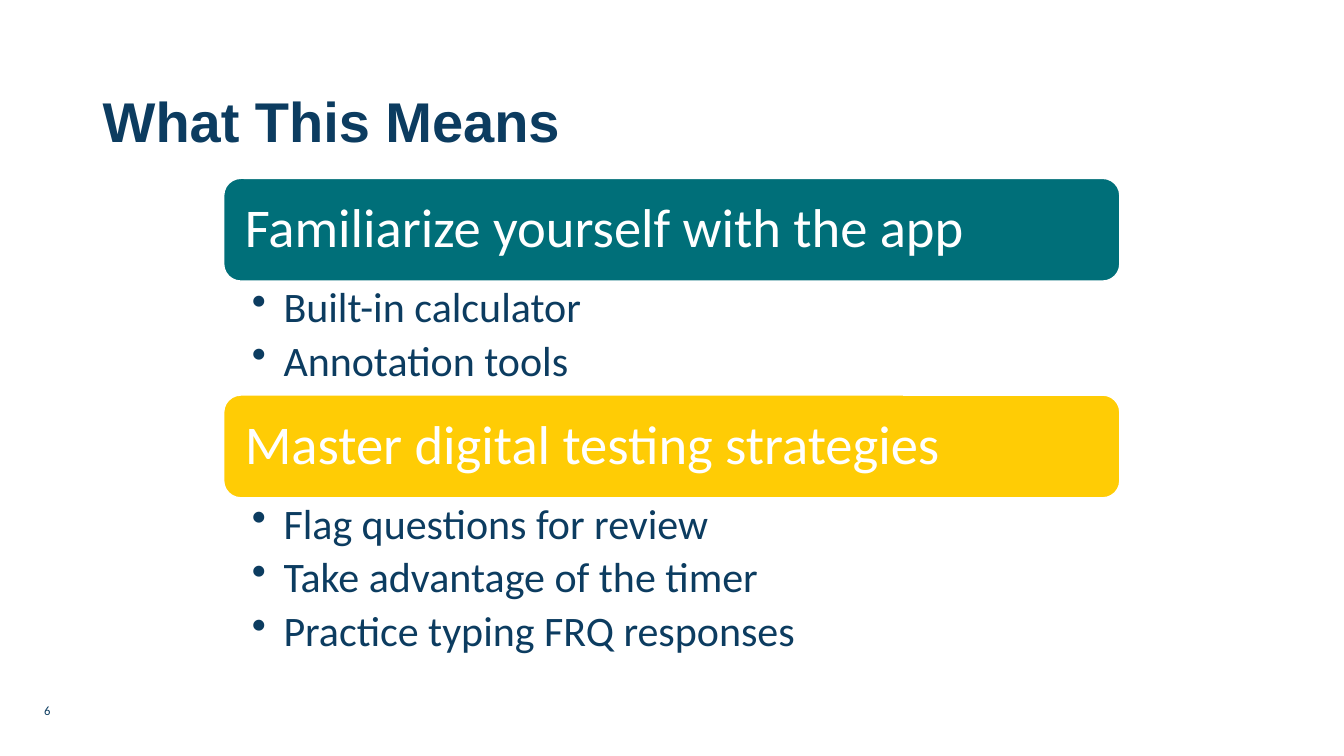
import pptx
import pptx.util
import pptx.dml.color
import pptx.enum.shapes
import pptx.enum.text
import lxml.etree

Pt = pptx.util.Pt
ANCHOR = pptx.enum.text.MSO_ANCHOR

TITLE = "What This Means"
PAGE = "6"
SECTIONS = [
    ("Familiarize yourself with the app", "006F79", 81.4,
     ["Built-in calculator", "Annotation tools"]),
    ("Master digital testing strategies", "FFCC05", 123.8,
     ["Flag questions for review", "Take advantage of the timer",
      "Practice typing FRQ responses"]),
]
NAVY, WHITE = "0C3C60", "FFFFFF"
LEFT, TOP, WIDTH, BAR_H = 159.8, 127.4, 640.1, 73.4
INDENT = 22.5

TITLE_FONT = {"size": Pt(40), "name": "Arial", "bold": True}
BAR_FONT = {"size": Pt(39), "name": "Calibri"}
BULLET_FONT = {"size": Pt(30), "name": "Calibri"}
PAGE_FONT = {"size": Pt(9), "name": "Calibri"}


def rgb(value):
    return pptx.dml.color.RGBColor.from_string(value)


def set_frame(tf, insets, anchor=ANCHOR.TOP):
    tf.word_wrap = True
    tf.auto_size = pptx.enum.text.MSO_AUTO_SIZE.NONE
    tf.vertical_anchor = anchor
    for side, inset in zip(("left", "top", "right", "bottom"), insets):
        setattr(tf, "margin_" + side, Pt(inset))


def write(p, text, font, color, spacing=0.9):
    p.alignment = pptx.enum.text.PP_ALIGN.LEFT
    p.line_spacing = spacing
    r = p.add_run()
    r.text = text
    for name, value in font.items():
        setattr(r.font, name, value)
    r.font.color.rgb = rgb(color)


def add_bullet(p):
    pPr = p._p.get_or_add_pPr()
    pPr.set("marL", str(Pt(INDENT)))
    pPr.set("indent", str(-Pt(INDENT)))
    bu = lxml.etree.SubElement(pPr, pptx.oxml.ns.qn("a:buChar"))
    bu.set("char", "•")


def add_bar(s, top, text, color):
    sp = s.shapes.add_shape(pptx.enum.shapes.MSO_SHAPE.ROUNDED_RECTANGLE,
                            Pt(LEFT), Pt(top), Pt(WIDTH), Pt(BAR_H))
    sp.shadow.inherit = False
    sp.fill.solid()
    sp.fill.fore_color.rgb = rgb(color)
    sp.line.color.rgb = rgb(WHITE)
    sp.line.width = Pt(1)
    set_frame(sp.text_frame, (11.5, 11.5, 11.5, 11.5), ANCHOR.MIDDLE)
    write(sp.text_frame.paragraphs[0], text, BAR_FONT, WHITE)


def add_list(s, top, height, items):
    tf = s.shapes.add_textbox(Pt(LEFT), Pt(top), Pt(WIDTH), Pt(height)).text_frame
    set_frame(tf, (20.2, 3.6, 21.6, 3.6))
    for i, item in enumerate(items):
        p = tf.add_paragraph() if i else tf.paragraphs[0]
        add_bullet(p)
        p.space_after = Pt(6)
        write(p, item, BULLET_FONT, NAVY)


def main():
    prs = pptx.Presentation()
    prs.slide_width, prs.slide_height = Pt(960), Pt(540)
    s = prs.slides.add_slide(prs.slide_layouts[5])

    title = s.shapes.title
    title.left, title.top, title.width, title.height = map(Pt, (66.2, 53.3, 828, 70.6))
    set_frame(title.text_frame, (7.2, 3.6, 7.2, 3.6), ANCHOR.MIDDLE)
    write(title.text_frame.paragraphs[0], TITLE, TITLE_FONT, NAVY)

    top = TOP
    for heading, color, height, items in SECTIONS:
        add_bar(s, top, heading, color)
        add_list(s, top + BAR_H, height, items)
        top += BAR_H + height

    tf = s.shapes.add_textbox(Pt(24.5), Pt(498.2), Pt(162), Pt(16.6)).text_frame
    set_frame(tf, (7.2, 3.6, 7.2, 3.6))
    write(tf.paragraphs[0], PAGE, PAGE_FONT, NAVY, 1.0)

    prs.save("out.pptx")


if __name__ == "__main__":
    main()
